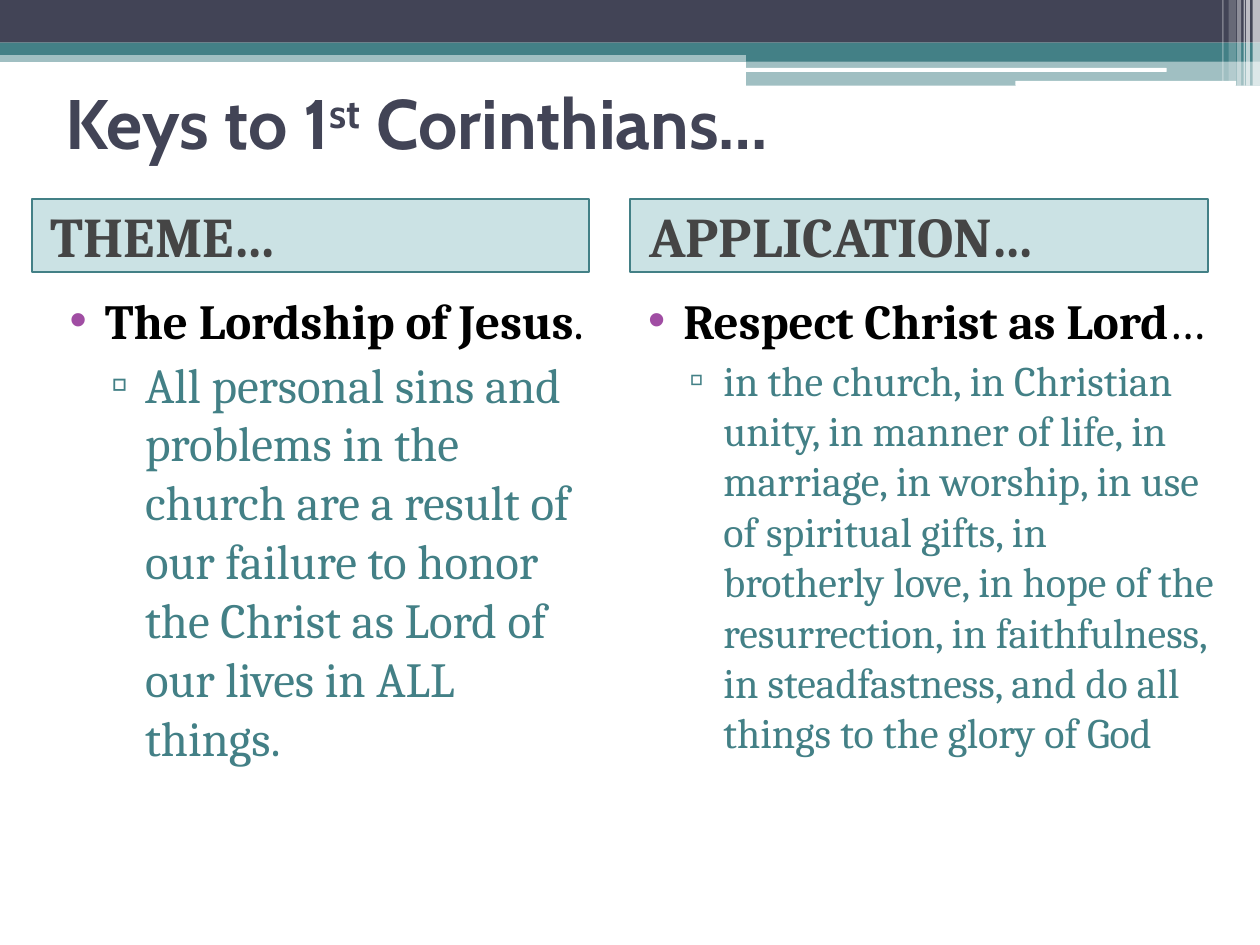
from lxml import etree
from pptx import Presentation
from pptx.dml.color import RGBColor
from pptx.enum import shapes, text
from pptx.oxml import ns
from pptx.util import Cm, Pt

NAVY = RGBColor(0x42, 0x44, 0x56)
TEAL = RGBColor(0x43, 0x80, 0x86)
AQUA = RGBColor(0x32, 0x8E, 0x97)
PURPLE = RGBColor(0xA0, 0x4D, 0xA3)
GREY = RGBColor(0x45, 0x45, 0x45)
BLACK = RGBColor(0, 0, 0)
WHITE = RGBColor(0xFF, 0xFF, 0xFF)

WIDTH, HEIGHT = 25.4, 19.05
RIGHT_BAND = 15.04
RECT = shapes.MSO_SHAPE.RECTANGLE
ROUND = shapes.MSO_SHAPE.ROUNDED_RECTANGLE

# shape, (left, top, width, height) in cm, colour, opacity in percent
BANDS = [
    (RECT, (0, 1.02, WIDTH, 0.23), TEAL, 50),
    (RECT, (0, 0, WIDTH, 0.86), NAVY, 100),
    (RECT, (0, 0.86, WIDTH, 0.25), TEAL, 100),
    (RECT, (RIGHT_BAND, 0.99, WIDTH - RIGHT_BAND, 0.25), TEAL, 100),
    (RECT, (RIGHT_BAND, 1.22, WIDTH - RIGHT_BAND, 0.51), TEAL, 50),
    (ROUND, (15.01, 1.37, 8.51, 0.08), WHITE, 100),
    (ROUND, (20.47, 1.63, 4.45, 0.1), WHITE, 100),
]
# left, width, height in cm, opacity in percent
STRIPES = [
    (25.25, 0.15, 1.73, 65), (25.12, 0.08, 1.73, 65), (25.07, 0.03, 1.73, 60),
    (24.94, 0.08, 1.73, 40), (24.77, 0.15, 1.63, 20), (24.64, 0.03, 1.63, 30),
]
BANDS += [(RECT, (left, 0, width, height), WHITE, opacity)
          for left, width, height, opacity in STRIPES]

TITLE = ["Keys to 1", "st", " Corinthians…"]
COLUMNS = [
    dict(heading="THEME…", heading_box=(0.64, 4.01, 11.23, 1.47),
         body_box=(0.84, 5.72, 11.23, 13.33),
         point=["The Lordship of Jesus", "."], detail_size=28,
         detail="All personal sins and problems in the church are a result of our "
                "failure to honor the Christ as Lord of our lives in ALL things."),
    dict(heading="APPLICATION…", heading_box=(12.7, 4.01, 11.66, 1.47),
         body_box=(12.5, 5.72, 12.27, 13.33),
         point=["Respect Christ as Lord", "…"], detail_size=24,
         detail="in the church, in Christian unity, in manner of life, in marriage, "
                "in worship, in use of spiritual gifts, in brotherly love, in hope of "
                "the resurrection, in faithfulness, in steadfastness, and do all "
                "things to the glory of God"),
]


def fill_shape(shape, color, opacity):
    shape.fill.solid()
    shape.fill.fore_color.rgb = color
    if opacity < 100:
        tint = shape._element.spPr.find(".//" + ns.qn("a:srgbClr"))
        etree.SubElement(tint, ns.qn("a:alpha"), val=str(opacity * 1000))


def place(box, area, anchor):
    box.left, box.top, box.width, box.height = map(Cm, area)
    frame = box.text_frame
    frame.word_wrap = True
    frame.auto_size = text.MSO_AUTO_SIZE.NONE
    frame.vertical_anchor = anchor
    return frame


def write(para, parts, font, size, color, bold=False):
    for part in parts:
        span = para.add_run()
        span.text = part
        span.font.name, span.font.size, span.font.bold = font, Pt(size), bold
        span.font.color.rgb = color
    para.alignment = text.PP_ALIGN.LEFT


def indent(para, left, first=0, bullet=None, color=None):
    para.space_before = Pt(3)
    props = para._p.get_or_add_pPr()
    props.set("marL", str(Cm(left)))
    props.set("indent", str(Cm(first)))
    if bullet:
        bullet_color = etree.SubElement(props, ns.qn("a:buClr"))
        etree.SubElement(bullet_color, ns.qn("a:srgbClr"), val=str(color))
        etree.SubElement(props, ns.qn("a:buFont"), typeface="Arial")
        etree.SubElement(props, ns.qn("a:buChar"), char=bullet)


deck = Presentation()
deck.slide_width, deck.slide_height = Cm(WIDTH), Cm(HEIGHT)
page = deck.slides.add_slide(deck.slide_layouts.get_by_name("Comparison"))
title, *bodies = page.placeholders

# Bands go behind the placeholders, after the two header nodes of the tree
for position, (kind, area, color, opacity) in enumerate(BANDS, start=2):
    band = page.shapes.add_shape(kind, *map(Cm, area))
    band.shadow.inherit = False
    band.line.fill.background()
    fill_shape(band, color, opacity)
    page.shapes._spTree.insert(position, band._element)

para = place(title, (1.07, 1.27, 23.29, 2.34), text.MSO_ANCHOR.MIDDLE).paragraphs[0]
write(para, TITLE, "Cabin", 40, NAVY, bold=True)
para.runs[1]._r.get_or_add_rPr().set("baseline", "30000")

for column, heading, body in zip(COLUMNS, bodies[::2], bodies[1::2]):
    para = place(heading, column["heading_box"], text.MSO_ANCHOR.MIDDLE).paragraphs[0]
    write(para, [column["heading"]], "Cambria", 32, GREY, bold=True)
    indent(para, 0.13)
    fill_shape(heading, AQUA, 25)
    heading.line.color.rgb = TEAL
    heading.line.width = Pt(1)

    frame = place(body, column["body_box"], text.MSO_ANCHOR.TOP)
    point, detail = frame.paragraphs[0], frame.add_paragraph()
    write(point, column["point"], "Cambria", 28, BLACK)
    point.runs[0].font.bold = True
    indent(point, 1.02, -0.71, "•", PURPLE)
    detail.level = 1
    write(detail, [column["detail"]], "Cambria", column["detail_size"], TEAL)
    indent(detail, 1.83, -0.69, "▫", TEAL)

deck.save("out.pptx")
